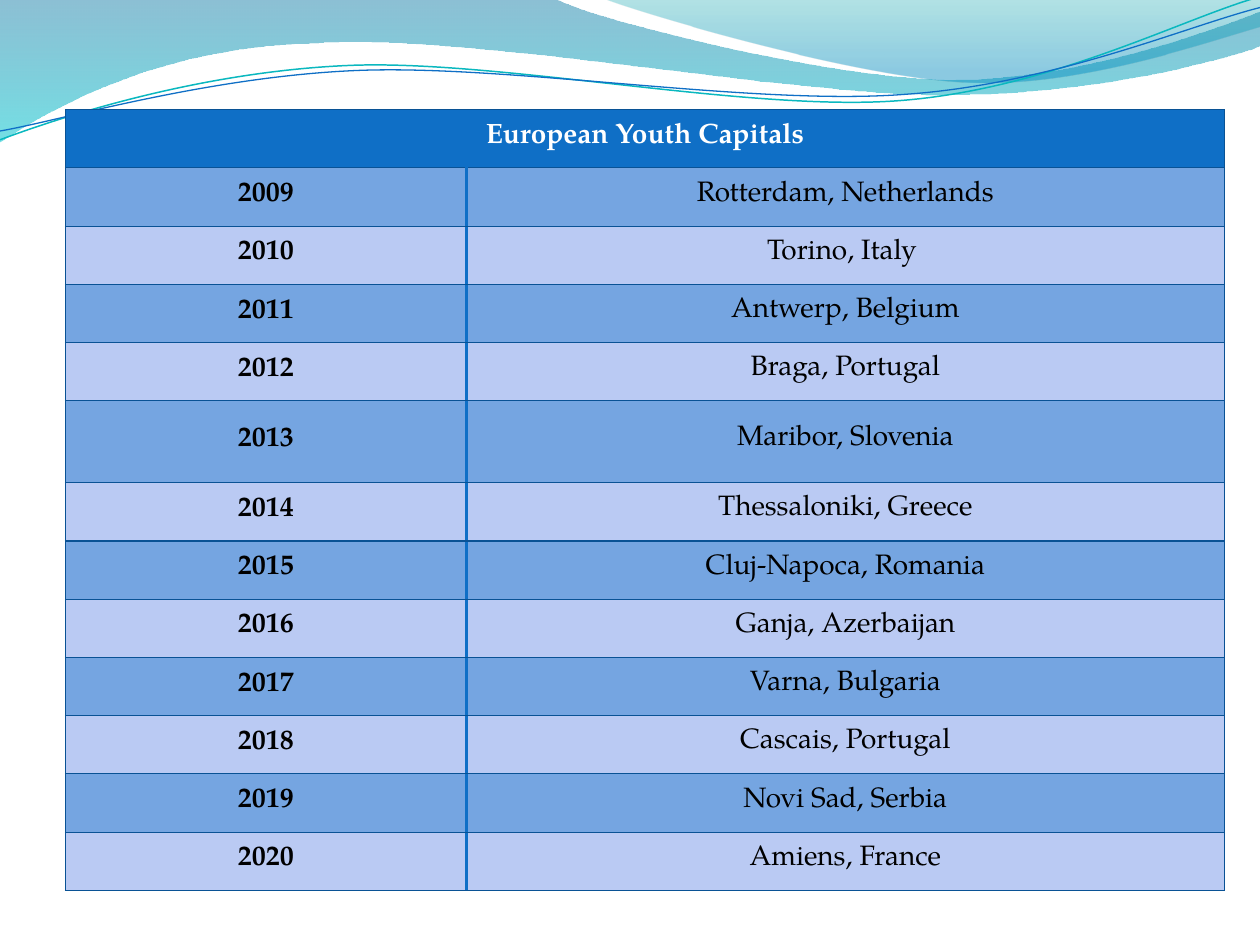
from lxml import etree
from pptx import Presentation
from pptx.dml.color import RGBColor
from pptx.enum.text import MSO_ANCHOR, PP_ALIGN
from pptx.oxml.ns import qn
from pptx.util import Inches, Pt

CENTER, MIDDLE = PP_ALIGN.CENTER, MSO_ANCHOR.MIDDLE
FONT = "TeX Gyre Pagella"
WHITE = RGBColor(0xFF, 0xFF, 0xFF)
BLACK = RGBColor(0x00, 0x00, 0x00)
BLUE = RGBColor(0x0F, 0x6F, 0xC6)
NAVY = RGBColor(0x09, 0x52, 0x95)
MID = RGBColor(0x75, 0xA5, 0xE1)
PALE = RGBColor(0xBA, 0xCA, 0xF3)
TEAL = RGBColor(0x0A, 0xB8, 0xBF)
WAVE_TOP = RGBColor(0x00, 0x74, 0xA1)
WAVE_END = RGBColor(0x00, 0xC6, 0xCF)
FOLD_TOP = RGBColor(0x00, 0xA1, 0xA9)
FOLD_END = RGBColor(0x00, 0x8B, 0xBF)

TITLE = "European Youth Capitals"
START = 2009
CITIES = [
    "Rotterdam, Netherlands", "Torino, Italy ", "Antwerp, Belgium",
    "Braga, Portugal", "Maribor, Slovenia", "Thessaloniki, Greece",
    "Cluj-Napoca, Romania", "Ganja, Azerbaijan", "Varna, Bulgaria",
    "Cascais, Portugal", "Novi Sad, Serbia", "Amiens, France",
]
TALL = 2013

WAVE = [
    (0, 0), (4.4, -0.01), (4.76, 0.17, 6.64, 0.63, 7.58, 0.63),
    (8.53, 0.63, 9.58, 0.26, 10, 0.09), (10.01, 0.36),
    (9.83, 0.44, 8.7, 0.76, 7.46, 0.75), (6.22, 0.75, 3.82, 0.28, 2.57, 0.34),
    (1.29, 0.36, 0.46, 0.83, -0.01, 1.13), (0, 0),
]
FOLD = [
    (4.79, -0.01), (5.09, 0.11, 6.82, 0.62, 7.69, 0.65),
    (8.56, 0.69, 9.61, 0.32, 10, 0.21), (10, 0), (4.79, -0.01),
]
HIGH = [
    (0, 1.11), (0.48, 0.93, 1.58, 0.57, 2.77, 0.52),
    (3.95, 0.47, 5.93, 0.89, 7.13, 0.8), (8.33, 0.71, 9.38, 0.15, 9.98, -0.02),
]
LOW = [
    (0, 1.04), (0.47, 0.96, 1.64, 0.61, 2.83, 0.56),
    (4.03, 0.51, 5.97, 0.84, 7.17, 0.75), (8.36, 0.67, 9.41, 0.21, 10, 0.06),
]


def add_curve(slide, left, top, parts, close):
    """Draw corners and cubic curves relative to the given corner."""
    points = [(Inches(left + part[i]), Inches(top + part[i + 1]))
              for part in parts for i in range(0, len(part), 2)]
    pen = slide.shapes.build_freeform(*points[0])
    pen.add_line_segments(points[1:], close=close)
    shape = pen.convert_to_shape()
    shape.shadow.inherit = False
    lines = iter(list(shape._element.iter(qn("a:lnTo"))))
    for part in parts[1:]:
        first = next(lines)
        if len(part) == 6:
            first.tag = qn("a:cubicBezTo")
            for spare in (next(lines), next(lines)):
                first.append(spare[0])
                spare.getparent().remove(spare)
    return shape


def add_band(slide, left, top, parts, stops):
    """Draw a closed band with a see-through gradient running downwards."""
    band = add_curve(slide, left, top, parts, True)
    band.line.fill.background()
    band.fill.gradient()
    band.fill.gradient_angle = 270
    for stop, (place, color, _) in zip(band.fill.gradient_stops, stops):
        stop.position = place
        stop.color.rgb = color
    marks = band._element.spPr.iter(qn("a:srgbClr"))
    for mark, (_, _, alpha) in zip(marks, stops):
        etree.SubElement(mark, qn("a:alpha"), val=str(alpha * 1000))


def add_waves(slide, left, top):
    """Draw the bands and the two thin lines along the top edge."""
    add_band(slide, left, top, WAVE, [(0, WAVE_TOP, 45), (1, WAVE_END, 55)])
    add_band(slide, left, top, FOLD, [(0, FOLD_TOP, 30), (0.8, FOLD_END, 45)])
    for parts, color, width in ((HIGH, TEAL, 0.85), (LOW, BLUE, 0.75)):
        curve = add_curve(slide, left, top, parts, False)
        curve.fill.background()
        curve.line.color.rgb = color
        curve.line.width = Pt(width)


def set_edges(cell, thick=""):
    """Give a cell thin navy borders and one thick blue side, if named."""
    props = cell._tc.get_or_add_tcPr()
    for side in "LRTB":
        color, width = (BLUE, 2) if side == thick else (NAVY, 0.75)
        edge = etree.SubElement(props, qn("a:ln" + side), w=str(Pt(width)))
        fill = etree.SubElement(edge, qn("a:solidFill"))
        etree.SubElement(fill, qn("a:srgbClr"), val=str(color))


def fill_cell(cell, text, fill, color, bold):
    """Fill a cell and write one centred line in it."""
    cell.fill.solid()
    cell.fill.fore_color.rgb = fill
    cell.vertical_anchor = MIDDLE
    cell.margin_left = cell.margin_right = Inches(0.07)
    cell.margin_top = cell.margin_bottom = 0
    line = cell.text_frame.paragraphs[0]
    line.alignment = CENTER
    line.line_spacing = Pt(13.5)
    line.space_after = Pt(3)
    run = line.add_run()
    run.text = text
    run.font.name = FONT
    run.font.size = Pt(16)
    run.font.bold = bold
    run.font.color.rgb = color


def add_list(slide, left, top, width, height):
    """Place the table of years and cities in the given box."""
    count = len(CITIES) + 1
    table = slide.shapes.add_table(
        count, 2, Inches(left), Inches(top), Inches(width), Inches(height)).table
    table.first_row = table.horz_banding = False
    table.columns[0].width = Inches(3.18)
    table.columns[1].width = Inches(width - 3.18)
    tall = 0.65
    for row in table.rows:
        row.height = Inches((height - tall) / (count - 1))
    table.rows[TALL - START + 1].height = Inches(tall)

    head = table.cell(0, 0)
    head.merge(table.cell(0, 1))
    for cell in table.rows[0].cells:
        set_edges(cell)
    fill_cell(head, TITLE, BLUE, WHITE, True)

    for index, city in enumerate(CITIES):
        year, place = table.rows[index + 1].cells
        fill = PALE if index % 2 else MID
        set_edges(year, "R")
        set_edges(place, "L")
        fill_cell(year, str(START + index), fill, BLACK, True)
        fill_cell(place, city, fill, BLACK, False)


def main():
    """Build the slide and save it."""
    deck = Presentation()
    deck.slide_width, deck.slide_height = Inches(10), Inches(7.5)
    slide = deck.slides.add_slide(deck.slide_layouts[6])
    add_waves(slide, 0, 0)
    add_list(slide, 0.52, 0.87, 9.2, 6.2)
    deck.save("out.pptx")


if __name__ == "__main__":
    main()
